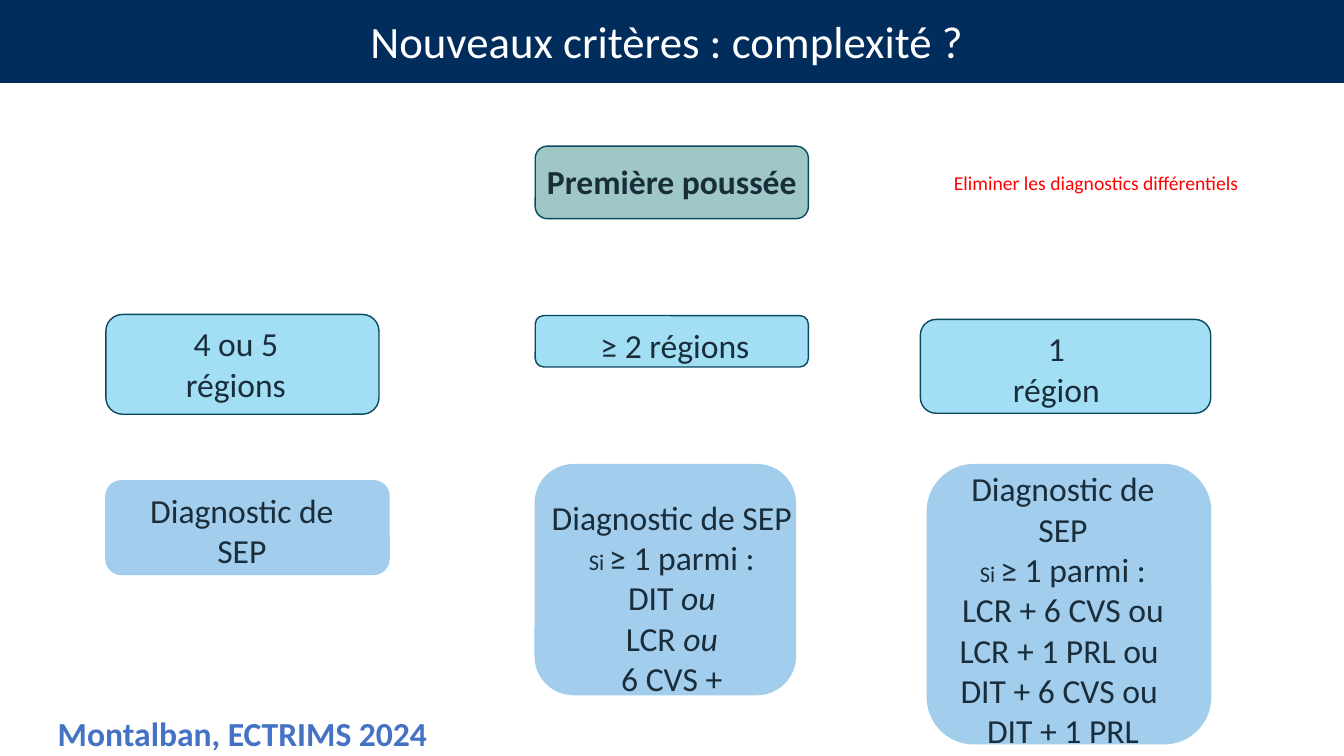
from pptx import Presentation
from pptx.dml.color import RGBColor
from pptx.enum.shapes import MSO_SHAPE
from pptx.enum.text import MSO_ANCHOR, MSO_AUTO_SIZE, PP_ALIGN
from pptx.util import Pt

RECTANGLE = MSO_SHAPE.RECTANGLE
ROUNDED = MSO_SHAPE.ROUNDED_RECTANGLE
CENTER = PP_ALIGN.CENTER
MIDDLE = MSO_ANCHOR.MIDDLE
GROW = MSO_AUTO_SIZE.SHAPE_TO_FIT_TEXT

COLORS = {
    "navy": "012D5C",
    "diagnosis": "A2CDED",
    "region": "A2DEF4",
    "attack": "9FC7C5",
    "outline": "0B4960",
    "ink": "192D3A",
    "source": "4472C4",
    "warning": "FF0000",
    "white": "FFFFFF",
}

deck = Presentation()
deck.slide_width, deck.slide_height = Pt(960), Pt(540)
page = deck.slides.add_slide(deck.slide_layouts[6])


def add_panel(place, fill, line, kind=ROUNDED, weight=1):
    panel = page.shapes.add_shape(kind, *map(Pt, place))
    panel.shadow.inherit = False
    panel.fill.solid()
    panel.fill.fore_color.rgb = RGBColor.from_string(COLORS[fill])
    panel.line.color.rgb = RGBColor.from_string(COLORS[line])
    panel.line.width = Pt(weight)
    return panel


def write(frame, lines, color="ink", size=24, bold=False):
    """Fill a frame with lines, each a list of (text, size or None, italic) spans."""
    for index, spans in enumerate(lines):
        para = frame.paragraphs[0] if index == 0 else frame.add_paragraph()
        para.alignment = CENTER
        for text, own_size, italic in spans:
            span = para.add_run()
            span.text = text
            span.font.name = "Calibri"
            span.font.size = Pt(own_size or size)
            span.font.bold = bold
            span.font.italic = italic
            span.font.color.rgb = RGBColor.from_string(COLORS[color])


# Panels: left, top, width, height
for place, fill, line in [
    ((662.4, 331.9, 202.3, 199.4), "diagnosis", "diagnosis"),
    ((382.3, 331.9, 185.8, 164.2), "diagnosis", "diagnosis"),
    ((75.6, 343.4, 202.3, 67), "diagnosis", "diagnosis"),
    ((657.4, 228.2, 207.4, 67), "region", "outline"),
    ((382.3, 225.4, 195.1, 36.7), "region", "outline"),
    ((75.6, 224.6, 195.1, 71.3), "region", "outline"),
    ((382.3, 104.4, 195.1, 51.8), "attack", "outline"),
]:
    add_panel(place, fill, line)

# Title band
band = add_panel((0, -0.7, 960, 59.8), "navy", "navy", RECTANGLE, 0.75)
band.text_frame.vertical_anchor = MIDDLE
write(band.text_frame, [[("Nouveaux critères : complexité ? ", None, False)]], "white", 32)

# Labels
diagnosis = [("Diagnostic de SEP", None, False)]
condition = [("Si ", 16, False), ("≥ 1 parmi :", None, False)]
either = ("ou", None, True)
two_regions = [
    diagnosis,
    condition,
    [("DIT ", None, False), either],
    [("LCR ", None, False), either],
    [("6 CVS +", None, False)],
]
pairs = ["LCR + 6 CVS ou", "LCR + 1 PRL ou ", "DIT + 6 CVS ou ", "DIT + 1 PRL"]
one_region = [diagnosis, condition] + [[(pair, None, False)] for pair in pairs]

for place, lines, color, size, bold in [
    ((34.6, 506.9, 277.2, 33.8), [[("Montalban, ECTRIMS 2024", None, False)]], "source", 24, True),
    ((108, 228.2, 121, 63.4), [[("4 ou 5 régions", None, False)]], "ink", 24, False),
    ((419.8, 229.7, 121, 33.8), [[(" ", 16, False), ("≥ 2 régions", None, False)]], "ink", 24, False),
    ((716.4, 231.8, 76.3, 63.4), [[("1 région", None, False)]], "ink", 24, False),
    ((97.2, 347, 151.2, 63.4), [diagnosis], "ink", 24, False),
    ((382.3, 352.1, 195.1, 150.5), two_regions, "ink", 24, False),
    ((669.6, 331.9, 179.3, 208.8), one_region, "ink", 24, False),
    ((382.3, 112.3, 195.1, 33.8), [[("Première poussée", None, False)]], "ink", 24, True),
    ((669.6, 119.5, 226.8, 22.3), [[("Eliminer les diagnostics différentiels", None, False)]], "warning", 14, False),
]:
    frame = page.shapes.add_textbox(*map(Pt, place)).text_frame
    frame.word_wrap = True
    frame.auto_size = GROW
    frame.margin_left = frame.margin_right = Pt(5)
    frame.margin_top = frame.margin_bottom = Pt(2.6)
    write(frame, lines, color, size, bold)

deck.save("out.pptx")
